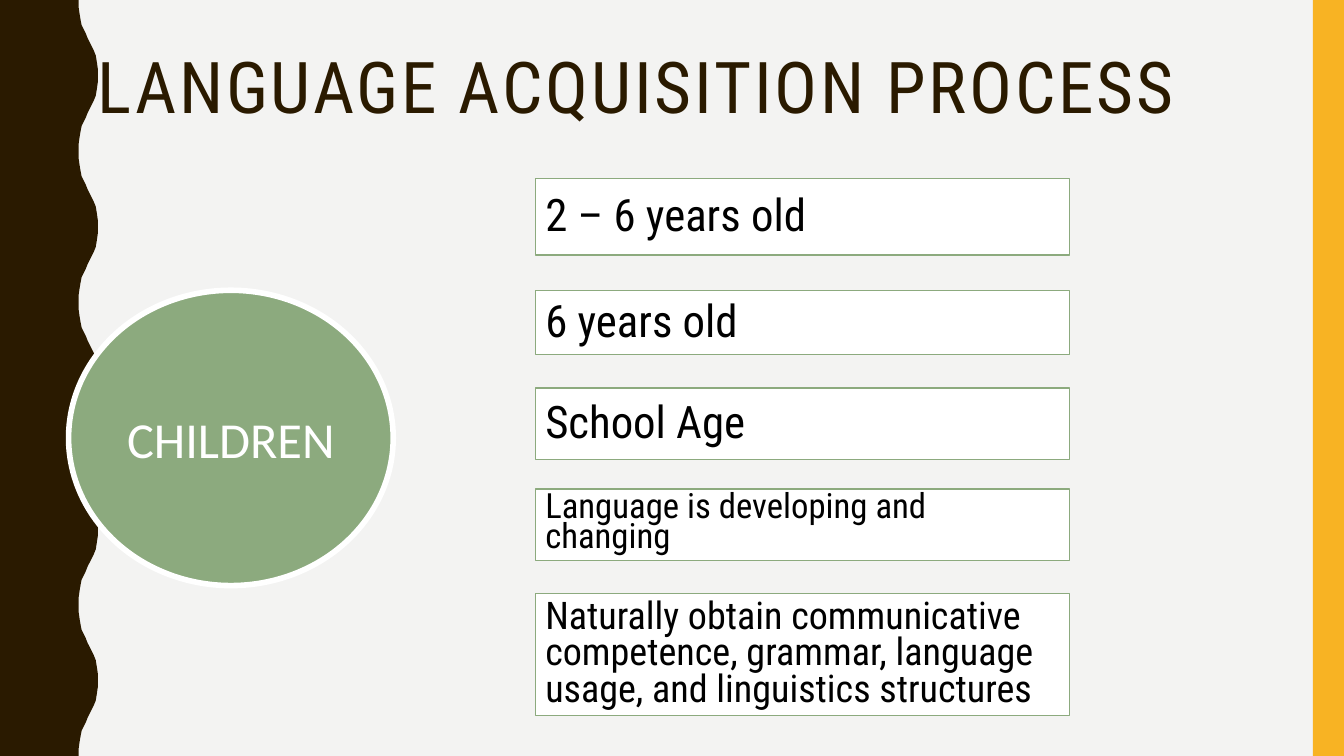
from dataclasses import dataclass

from pptx import Presentation
from pptx.dml.color import RGBColor
from pptx.enum.shapes import MSO_SHAPE
from pptx.enum.text import MSO_ANCHOR, MSO_AUTO_SIZE, PP_ALIGN
from pptx.shapes.base import BaseShape
from pptx.slide import Slide
from pptx.util import Inches, Pt

COLORS = {
    "paper": "F3F3F2",
    "brown": "2A1A00",
    "gold": "F8B323",
    "green": "8CAA7E",
    "white": "FFFFFF",
    "black": "000000",
}
HEAD = "Roboto Condensed"
WIDTH, HEIGHT = 13.33, 7.5

# Half of one wave, as (x, y); the other half mirrors it.
HALF = [
    (0.78, 0), (0.78, 0.07), (0.79, 0.14), (0.8, 0.2), (0.81, 0.25),
    (0.83, 0.29), (0.85, 0.33), (0.87, 0.38), (0.89, 0.42), (0.91, 0.46),
    (0.93, 0.5), (0.95, 0.55), (0.96, 0.61), (0.97, 0.68), (0.97, 0.75),
]
PERIOD = 1.5
WAVES = 5


@dataclass
class Stage:
    text: str
    top: float
    height: float
    size: float = 32
    spacing: float = 0.9


STAGES = [
    Stage("2 – 6 years old", 1.77, 0.76),
    Stage("6 years old", 2.88, 0.64),
    Stage("School Age", 3.85, 0.71),
    Stage("Language is developing and changing", 4.85, 0.71, 24.8, 0.7),
    Stage("Naturally obtain communicative competence, grammar, "
          "language usage, and linguistics structures", 5.89, 1.21, 27.2, 0.8),
]


def color(name: str) -> RGBColor:
    return RGBColor.from_string(COLORS[name])


def paint(shape: BaseShape, fill: str, line: str = "", weight: float = 1) -> None:
    shape.shadow.inherit = False
    shape.fill.solid()
    shape.fill.fore_color.rgb = color(fill)
    if line:
        shape.line.color.rgb = color(line)
        shape.line.width = Pt(weight)
    else:
        shape.line.fill.background()


def write(shape: BaseShape, text: str, size: float, ink: str, font: str = HEAD,
          align: PP_ALIGN = PP_ALIGN.LEFT, spacing: float = 1,
          anchor: MSO_ANCHOR = MSO_ANCHOR.MIDDLE) -> None:
    frame = shape.text_frame
    frame.text = text
    para = frame.paragraphs[0]
    formats = [
        (frame, {"word_wrap": True, "auto_size": MSO_AUTO_SIZE.NONE,
                 "vertical_anchor": anchor}),
        (para, {"alignment": align, "line_spacing": spacing}),
        (para.runs[0].font, {"name": font, "size": Pt(size)}),
    ]
    for target, values in formats:
        for key, value in values.items():
            setattr(target, key, value)
    para.runs[0].font.color.rgb = color(ink)


def add_shape(slide: Slide, kind: MSO_SHAPE, left: float, top: float,
              width: float, height: float) -> BaseShape:
    return slide.shapes.add_shape(
        kind, Inches(left), Inches(top), Inches(width), Inches(height))


def add_wave(slide: Slide) -> None:
    mirror = [(x, PERIOD - y) for x, y in reversed(HALF[:-1])]
    edge = [(x, y + i * PERIOD) for i in range(WAVES) for x, y in HALF + mirror]
    points = [(Inches(x), Inches(y)) for x, y in edge + [(0, HEIGHT)]]
    builder = slide.shapes.build_freeform(0, 0)
    builder.add_line_segments(points, close=True)
    paint(builder.convert_to_shape(), "brown")


def add_title(slide: Slide) -> None:
    title = slide.shapes.title
    title.left, title.top = Inches(0.87), Inches(0.46)
    title.width, title.height = Inches(11.5), Inches(1.45)
    write(title, "LANGUAGE ACQUISITION PROCESS", 51, "brown",
          spacing=0.9, anchor=MSO_ANCHOR.TOP)
    run = title.text_frame.paragraphs[0].runs[0]
    run.font.bold = False
    run.font._element.set("spc", "200")
    slide.shapes.element.append(title.element)


def add_circle(slide: Slide) -> None:
    circle = add_shape(slide, MSO_SHAPE.OVAL, 0.68, 2.88, 3.22, 2.93)
    paint(circle, "green", "white", 4)
    write(circle, "CHILDREN", 36, "white", "Calibri", PP_ALIGN.CENTER)
    circle.text_frame.margin_left = circle.text_frame.margin_right = 0


def add_stage(slide: Slide, stage: Stage) -> None:
    box = add_shape(slide, MSO_SHAPE.RECTANGLE, 5.31, stage.top, 5.3, stage.height)
    paint(box, "white", "green")
    write(box, stage.text, stage.size, "black", spacing=stage.spacing)


def main() -> None:
    deck = Presentation()
    deck.slide_width, deck.slide_height = Inches(WIDTH), Inches(HEIGHT)
    slide = deck.slides.add_slide(deck.slide_layouts[5])
    slide.background.fill.solid()
    slide.background.fill.fore_color.rgb = color("paper")
    add_wave(slide)
    paint(add_shape(slide, MSO_SHAPE.RECTANGLE, 13.02, 0, 0.31, HEIGHT), "gold")
    add_title(slide)
    add_circle(slide)
    for stage in STAGES:
        add_stage(slide, stage)
    deck.save("out.pptx")


if __name__ == "__main__":
    main()
